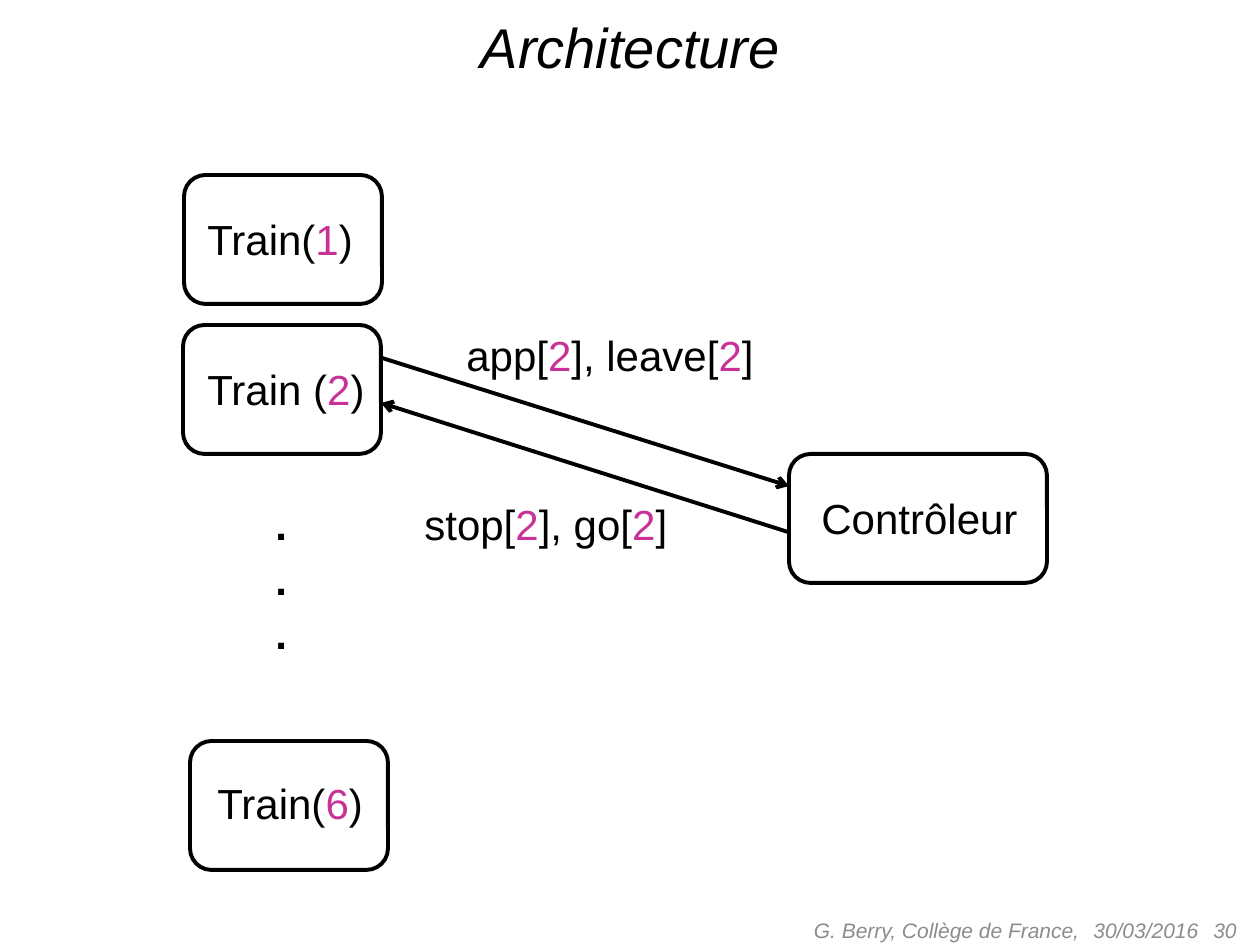
from itertools import groupby

from lxml import etree
from pptx import Presentation
from pptx.dml.color import RGBColor
from pptx.enum.shapes import MSO_CONNECTOR, MSO_SHAPE
from pptx.enum.text import MSO_ANCHOR, PP_ALIGN
from pptx.oxml.ns import qn
from pptx.util import Emu, Pt

ROUNDED = MSO_SHAPE.ROUNDED_RECTANGLE
STRAIGHT = MSO_CONNECTOR.STRAIGHT
TOP, MIDDLE = MSO_ANCHOR.TOP, MSO_ANCHOR.MIDDLE
LEFT, CENTER, RIGHT = PP_ALIGN.LEFT, PP_ALIGN.CENTER, PP_ALIGN.RIGHT

EMU_PER_PX = 914400 / 126
FONT = "Arial"
BLACK, GREY, INDEX = "000000", "8C8C8C", "C83296"
NODE_HEIGHT, LABEL_HEIGHT = 129, 64


def px(*lengths):
    return [Emu(round(length * EMU_PER_PX)) for length in lengths]


def color(value):
    return RGBColor.from_string(value)


def style_line(shape):
    shape.line.color.rgb = color(BLACK)
    shape.line.width = Pt(2.25)


def add_heading(shapes, box, text, size, ink, align):
    """Italic text, centred vertically: the title and the footer parts."""
    shape = shapes.add_textbox(*px(*box))
    frame = shape.text_frame
    frame.word_wrap = True
    frame.vertical_anchor = MIDDLE
    para = frame.paragraphs[0]
    para.text = text
    para.alignment = align
    para.font.name = FONT
    para.font.size = Pt(size)
    para.font.italic = True
    para.font.color.rgb = color(ink)


def add_label(shapes, box, lines, bold=None):
    """Unwrapped 24 pt text in which every number takes the index colour."""
    frame = shapes.add_textbox(*px(*box)).text_frame
    frame.word_wrap = False
    frame.vertical_anchor = TOP
    frame.margin_top, frame.margin_bottom = px(3, 9)
    for number, line in enumerate(lines):
        para = frame.add_paragraph() if number else frame.paragraphs[0]
        para.alignment = LEFT
        para.line_spacing = 1.05
        para.space_after = Pt(1)
        para.font.name = FONT
        para.font.size = Pt(24)
        para.font.bold = bold
        for is_index, letters in groupby(line, str.isdigit):
            span = para.add_run()
            span.text = "".join(letters)
            span.font.color.rgb = color(INDEX if is_index else BLACK)


def add_node(page, box, text, label_offset, label_width):
    """Rounded box grouped with its label."""
    left, top, width, height = box
    dx, dy = label_offset
    group = page.shapes.add_group_shape()
    outline = group.shapes.add_shape(ROUNDED, *px(left, top, width, height))
    outline.shadow.inherit = False
    outline.fill.background()
    style_line(outline)
    add_label(group.shapes, (left + dx, top + dy, label_width, LABEL_HEIGHT), [text])


def add_arrow(page, start, end):
    arrow = page.shapes.add_connector(STRAIGHT, *px(*start, *end))
    style_line(arrow)
    etree.SubElement(arrow.line._get_or_add_ln(), qn("a:tailEnd"), type="arrow")
    etree.SubElement(arrow._element.spPr, qn("a:effectLst"))


def add_footer(page, top, height):
    for left, width, text, align in (
        (693, 399, "G. Berry, Collège de France,", RIGHT),
        (1081, 176, "30/03/2016", LEFT),
        (955, 294, "30", RIGHT),
    ):
        add_heading(page.shapes, (left, top, width, height), text, 12, GREY, align)


def add_architecture(page):
    for left, top, text, offset, label_width in (
        (184, 175, "Train(1)", (11, 33), 174),
        (183, 325, "Train (2)", (12, 33), 185),
        (190, 741, "Train(6)", (15, 31), 174),
    ):
        add_node(page, (left, top, 198, NODE_HEIGHT), text, offset, label_width)
    add_label(page.shapes, (263, 493, 38, 224), "...", bold=True)
    add_node(page, (789, 454, 258, NODE_HEIGHT), "Contrôleur", (20, 33), 223)

    add_arrow(page, (382, 358), (789, 486))
    add_arrow(page, (788, 532), (381, 403))
    add_label(page.shapes, (454, 324, 315, LABEL_HEIGHT), ["app[2], leave[2]"])
    add_label(page.shapes, (412, 493, 271, LABEL_HEIGHT), ["stop[2], go[2]"])


def main():
    deck = Presentation()
    deck.slide_width, deck.slide_height = px(1260, 945)
    page = deck.slides.add_slide(deck.slide_layouts[6])
    add_heading(page.shapes, (32, 6, 1197, 81), "Architecture", 32, BLACK, CENTER)
    add_footer(page, 905, 50)
    add_architecture(page)
    deck.save("out.pptx")


if __name__ == "__main__":
    main()
